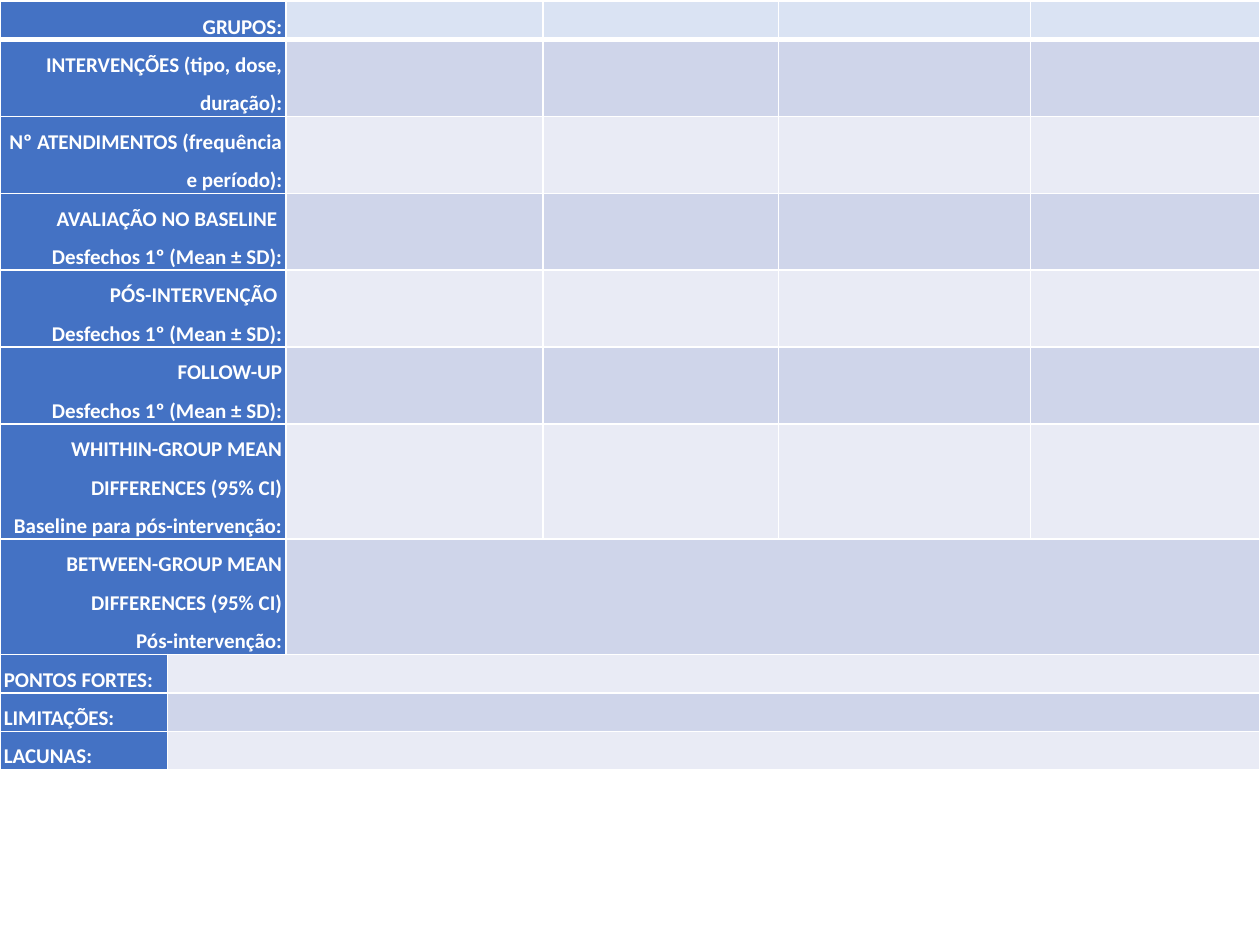
from dataclasses import dataclass

from lxml import etree
from pptx import Presentation
from pptx import util as u
from pptx.dml.color import RGBColor
from pptx.enum import text
from pptx.oxml.ns import qn


@dataclass
class Theme:
    label: str = "4472C4"
    header: str = "DAE3F3"
    bands: tuple = ("E9EBF5", "CFD5EA")
    white: str = "FFFFFF"
    font: str = "Calibri"
    size: int = 12
    rule: int = 1
    header_rule: int = 3


RIGHT, LEFT = text.PP_ALIGN.RIGHT, text.PP_ALIGN.LEFT
MIDDLE, TOP = text.MSO_ANCHOR.MIDDLE, text.MSO_ANCHOR.TOP
LINE_HEIGHT = 0.3
COLUMNS = [1.33, 0.94, 2.04, 1.87, 2, 1.82]
OUTCOME = "Desfechos 1º (Mean ± SD):"

# label paragraphs, text lines, label columns, merged answer, anchor
ROWS = [
    (["GRUPOS:"], 1, 2, False, MIDDLE),
    (["INTERVENÇÕES (tipo, dose, duração):"], 2, 2, False, MIDDLE),
    (["Nº ATENDIMENTOS (frequência e período):"], 2, 2, False, MIDDLE),
    (["AVALIAÇÃO NO BASELINE ", OUTCOME], 2, 2, False, TOP),
    (["PÓS-INTERVENÇÃO ", OUTCOME], 2, 2, False, TOP),
    (["FOLLOW-UP", OUTCOME], 2, 2, False, TOP),
    (["WHITHIN-GROUP MEAN DIFFERENCES (95% CI)",
      "Baseline para pós-intervenção:"], 3, 2, False, TOP),
    (["BETWEEN-GROUP MEAN DIFFERENCES (95% CI)", "Pós-intervenção:"], 3, 2, True, TOP),
    (["PONTOS FORTES:"], 1, 1, True, TOP),
    (["LIMITAÇÕES:"], 1, 1, True, TOP),
    (["LACUNAS:"], 1, 1, True, TOP),
]


class StudySlide:
    def __init__(self, slide, theme):
        self.slide = slide
        self.theme = theme

    def borders(self, cell, top, bottom):
        widths = {"lnL": self.theme.rule, "lnR": self.theme.rule, "lnT": top, "lnB": bottom}
        properties = cell._tc.get_or_add_tcPr()
        for side, width in widths.items():
            edge = etree.SubElement(properties, qn(f"a:{side}"), w=str(u.Pt(width)))
            paint = etree.SubElement(edge, qn("a:solidFill"))
            etree.SubElement(paint, qn("a:srgbClr"), val=self.theme.white)

    def style_cell(self, cell, row, colour):
        theme = self.theme
        self.borders(cell, theme.header_rule if row == 1 else theme.rule,
                     theme.header_rule if row == 0 else theme.rule)
        cell.fill.solid()
        cell.fill.fore_color.rgb = RGBColor.from_string(colour)
        margins = {"margin_left": u.Inches(0.03), "margin_right": u.Inches(0.03),
                   "margin_top": 0, "margin_bottom": 0}
        for name, value in margins.items():
            setattr(cell, name, value)
        etree.SubElement(cell.text_frame.paragraphs[0]._p, qn("a:endParaRPr"),
                         sz=str(theme.size * 100))

    def write_label(self, cell, lines, align, anchor):
        cell.vertical_anchor = anchor
        frame = cell.text_frame
        font_format = {"name": self.theme.font, "size": u.Pt(self.theme.size), "bold": True}
        for index, line in enumerate(lines):
            paragraph = frame.add_paragraph() if index else frame.paragraphs[0]
            paragraph.alignment = align
            paragraph.line_spacing = 1.5
            run = paragraph.add_run()
            run.text = line
            for name, value in font_format.items():
                setattr(run.font, name, value)
            run.font.color.rgb = RGBColor.from_string(self.theme.white)

    def table(self, left, top, columns, rows):
        height = LINE_HEIGHT * sum(row[1] for row in rows)
        summary = self.slide.shapes.add_table(
            len(rows), len(columns), u.Inches(left), u.Inches(top),
            u.Inches(sum(columns)), u.Inches(height)).table
        for column, width in zip(summary.columns, columns):
            column.width = u.Inches(width)
        last = len(columns) - 1
        for r, (lines, count, label_span, merged, anchor) in enumerate(rows):
            summary.rows[r].height = u.Inches(LINE_HEIGHT * count)
            band = self.theme.bands[r % 2] if r else self.theme.header
            for c in range(len(columns)):
                self.style_cell(summary.cell(r, c), r,
                                self.theme.label if c < label_span else band)
            if label_span > 1:
                summary.cell(r, 0).merge(summary.cell(r, label_span - 1))
            if merged:
                summary.cell(r, label_span).merge(summary.cell(r, last))
            self.write_label(summary.cell(r, 0), lines,
                             RIGHT if label_span > 1 else LEFT, anchor)


def main():
    deck = Presentation()
    deck.slide_width, deck.slide_height = u.Inches(10), u.Inches(7.5)
    study = StudySlide(deck.slides.add_slide(deck.slide_layouts[6]), Theme())
    study.table(0, 0.01, COLUMNS, ROWS)
    deck.save("out.pptx")


if __name__ == "__main__":
    main()
